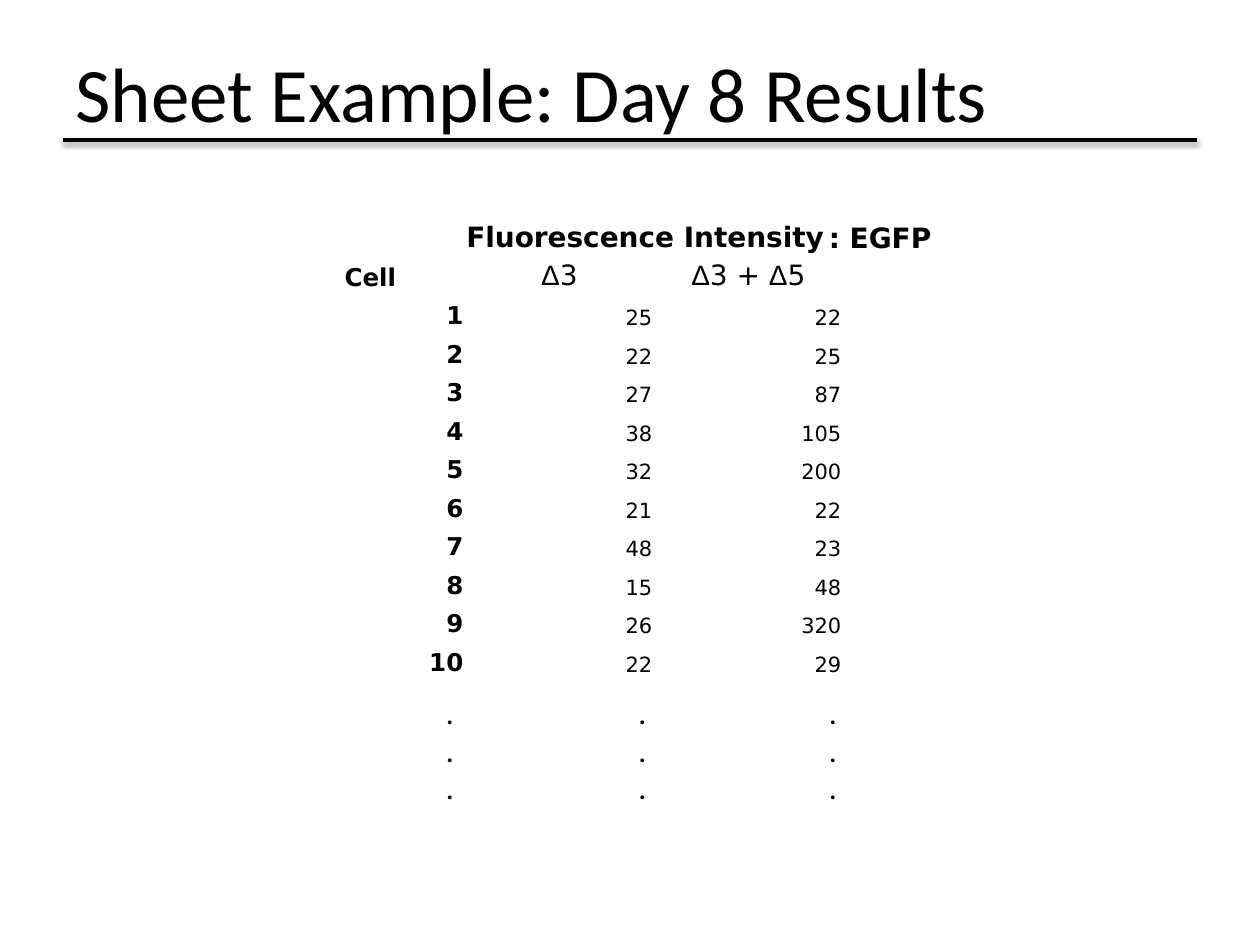
from lxml.etree import SubElement
from pptx import Presentation
from pptx.dml.color import RGBColor
from pptx.enum.shapes import MSO_CONNECTOR
from pptx.enum.text import MSO_ANCHOR as ANCHOR, PP_ALIGN as ALIGN
from pptx.oxml.ns import qn
from pptx.util import Cm, Pt

# Content
TITLE = "Sheet Example: Day 8 Results"
HEADING = "Fluorescence Intensity"
HEADING_END = ": EGFP"
COLUMNS = ["Cell", ["Δ", "3"], ["Δ", "3 + ", "Δ", "5"]]
DELTA_3 = [25, 22, 27, 38, 32, 21, 48, 15, 26, 22]
DELTA_3_5 = [22, 25, 87, 105, 200, 22, 23, 48, 320, 29]
DOT_LEFTS = [8.74, 12.62, 16.46]

COLORS = {"text": "000000", "shadow": "000000"}
TABLE_FONT, SYMBOL_FONT, BODY_FONT = "DejaVu Sans", "Arial", "Calibri"


def style(font, size, name=TABLE_FONT, bold=False):
    font.size, font.name, font.bold = Pt(size), name, bold
    font.color.rgb = RGBColor.from_string(COLORS["text"])


def fill_cell(cell, parts, size, align, bold=False):
    p = cell.text_frame.paragraphs[0]
    p.alignment = align
    style(p.font, size, bold=bold)
    for part in parts:
        r = p.add_run()
        r.text = part
        style(r.font, size, SYMBOL_FONT if part == "Δ" else TABLE_FONT, bold)


def add_text(slide, lines, box, size, name, bold=False):
    tf = slide.shapes.add_textbox(*map(Cm, box)).text_frame
    tf.word_wrap = True
    tf.text = "\n".join(lines)
    for p in tf.paragraphs:
        style(p.font, size, name, bold)


def add_rule(slide):
    line = slide.shapes.add_connector(
        MSO_CONNECTOR.STRAIGHT, Cm(1.27), Cm(2.82), Cm(24.13), Cm(2.82))
    line.line.width = Pt(2)
    line.line.color.rgb = RGBColor.from_string(COLORS["text"])
    effects = SubElement(line._element.spPr, qn("a:effectLst"))
    shadow = SubElement(effects, qn("a:outerShdw"), blurRad=str(Pt(3.1)),
                        dist=str(Pt(1.6)), dir="5400000", rotWithShape="0")
    color = SubElement(shadow, qn("a:srgbClr"), val=COLORS["shadow"])
    SubElement(color, qn("a:alpha"), val="38000")


def add_results(slide):
    n_rows = len(DELTA_3) + 2
    table = slide.shapes.add_table(n_rows, 3, Cm(5.56), Cm(4.34),
                                   Cm(11.43), Cm(9.32)).table
    table.first_row = table.horz_banding = False
    for cell in table.iter_cells():
        cell.fill.background()
        cell.vertical_anchor = ANCHOR.BOTTOM
        cell.margin_left = cell.margin_right = cell.margin_top = Cm(0.03)
        cell.margin_bottom = 0

    # Two heading rows
    fill_cell(table.cell(0, 0), [], 14, ALIGN.LEFT)
    table.cell(0, 1).merge(table.cell(0, 2))
    fill_cell(table.cell(0, 1), [HEADING], 16, ALIGN.LEFT, True)
    fill_cell(table.cell(1, 0), [COLUMNS[0]], 14, ALIGN.CENTER, True)
    for col in (1, 2):
        fill_cell(table.cell(1, col), COLUMNS[col], 16, ALIGN.CENTER)

    # One row per numbered cell
    for number, values in enumerate(zip(DELTA_3, DELTA_3_5), 1):
        fill_cell(table.cell(number + 1, 0), [str(number)], 14, ALIGN.RIGHT, True)
        for col, value in enumerate(values, 1):
            fill_cell(table.cell(number + 1, col), [str(value)], 12, ALIGN.RIGHT)


def main():
    prs = Presentation()
    prs.slide_width, prs.slide_height = Cm(25.4), Cm(19.05)
    slide = prs.slides.add_slide(prs.slide_layouts[5])

    # Title over a rule
    add_rule(slide)
    title = slide.shapes.title
    title.left, title.top, title.width, title.height = map(
        Cm, (1.27, 0.25, 22.86, 3.18))
    title.text_frame.text = TITLE
    title.text_frame.vertical_anchor = ANCHOR.MIDDLE
    p = title.text_frame.paragraphs[0]
    p.alignment = ALIGN.LEFT
    style(p.font, 44, BODY_FONT)

    # Results, continuation dots and the end of the heading
    add_results(slide)
    for left in DOT_LEFTS:
        add_text(slide, ["."] * 3, (left, 13.84, 0.66, 2.57), 18, BODY_FONT)
    add_text(slide, [HEADING_END], (16.46, 4.32, 2.57, 0.94), 16, TABLE_FONT, True)

    prs.save("out.pptx")


if __name__ == "__main__":
    main()
